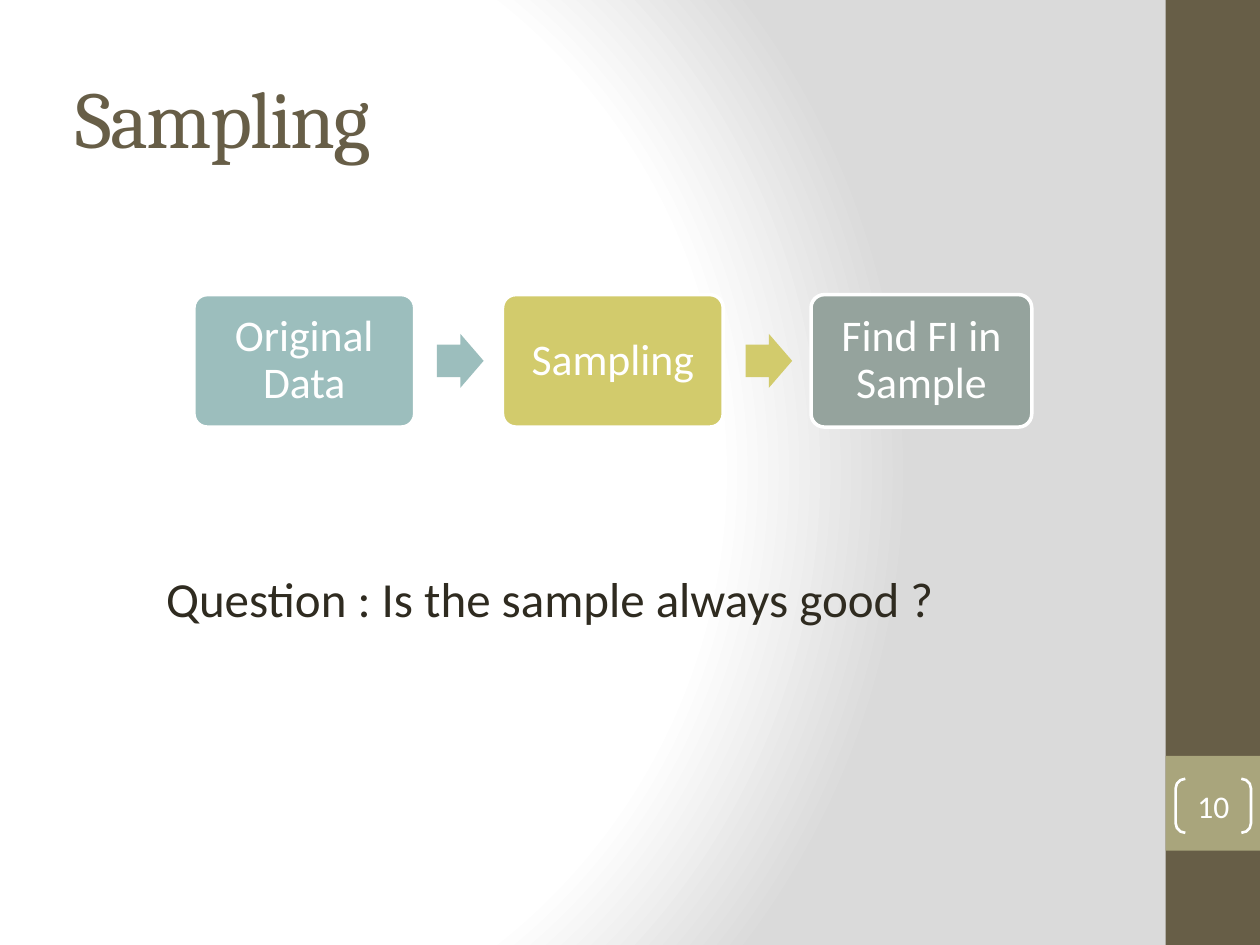
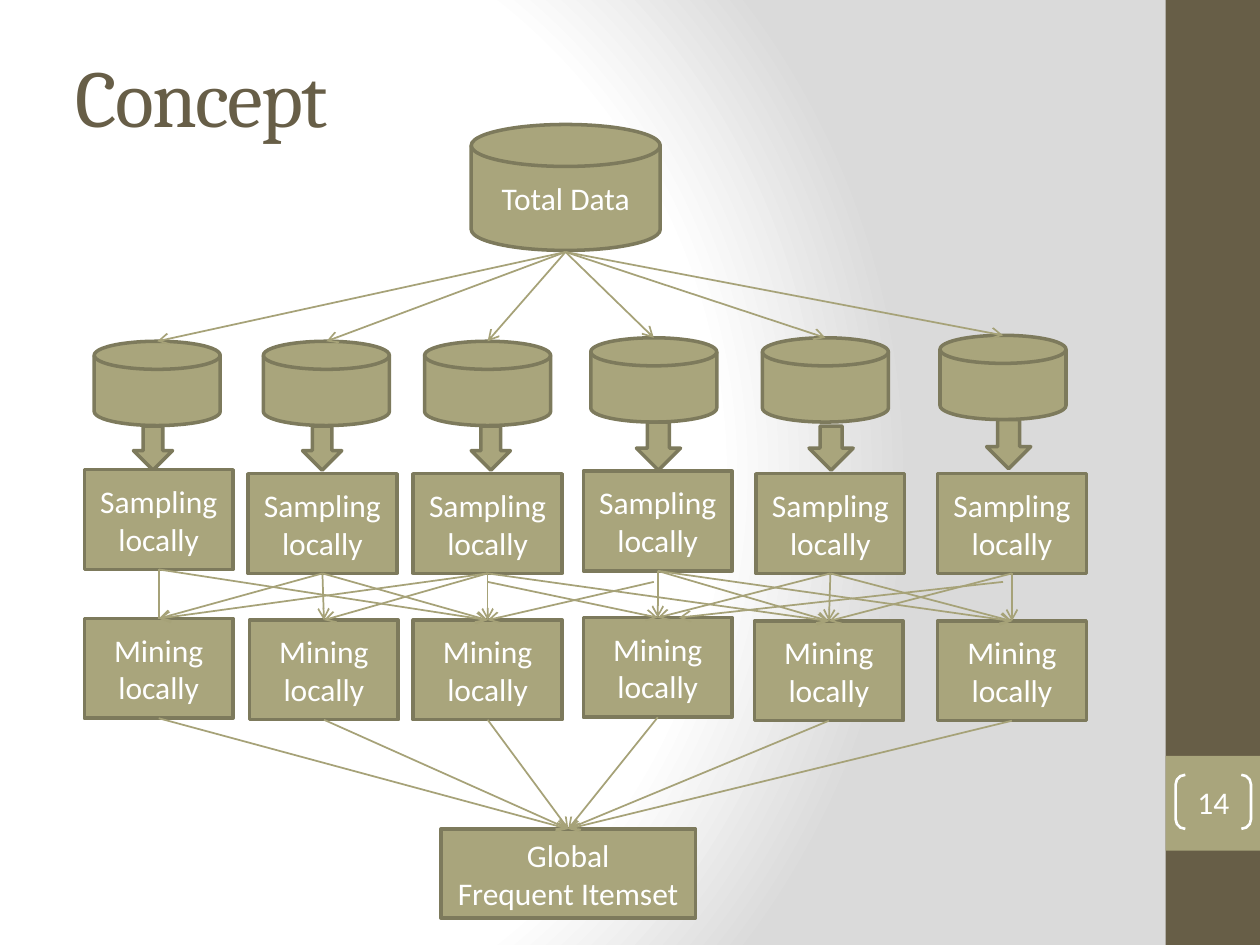
from pptx import Presentation
from pptx.dml.color import RGBColor
from pptx.enum.shapes import MSO_CONNECTOR, MSO_SHAPE
from pptx.enum.text import MSO_ANCHOR, MSO_AUTO_SIZE, PP_ALIGN
from pptx.oxml import parse_xml
from pptx.oxml.ns import nsdecls, qn
from pptx.util import Cm, Pt

RECT = MSO_SHAPE.RECTANGLE
ROUNDED = MSO_SHAPE.ROUNDED_RECTANGLE
DISK = MSO_SHAPE.FLOWCHART_MAGNETIC_DISK
RIGHT_ARROW = MSO_SHAPE.RIGHT_ARROW
DOWN_ARROW = MSO_SHAPE.DOWN_ARROW
BRACKETS = MSO_SHAPE.DOUBLE_BRACKET
STRAIGHT = MSO_CONNECTOR.STRAIGHT
MIDDLE = MSO_ANCHOR.MIDDLE
CENTER = PP_ALIGN.CENTER
LEFT = PP_ALIGN.LEFT
NO_FIT = MSO_AUTO_SIZE.NONE
FIT_SHAPE = MSO_AUTO_SIZE.SHAPE_TO_FIT_TEXT
TOP, BOTTOM = 0, 2

WHITE = RGBColor(0xFF, 0xFF, 0xFF)
BROWN = RGBColor(0x67, 0x5E, 0x47)
INK = RGBColor(0x2F, 0x2B, 0x20)
OLIVE = RGBColor(0xA9, 0xA5, 0x7C)
OLIVE_DARK = RGBColor(0x7D, 0x7A, 0x5C)
OLIVE_LINE = RGBColor(0xA6, 0xA2, 0x78)
TEAL = RGBColor(0x9C, 0xBE, 0xBD)
LIME = RGBColor(0xD2, 0xCB, 0x6C)
SAGE = RGBColor(0x95, 0xA3, 0x9D)

BACKGROUND = f"""<a:gradFill {nsdecls("a")} rotWithShape="1"><a:gsLst>
<a:gs pos="0"><a:srgbClr val="FFFFFF"/></a:gs>
<a:gs pos="75000"><a:srgbClr val="FFFFFF"/></a:gs>
<a:gs pos="100000"><a:srgbClr val="DADADA"/></a:gs></a:gsLst>
<a:path path="circle"><a:fillToRect l="20000" t="50000" r="100000" b="50000"/></a:path>
</a:gradFill>"""


class Deck:
    heading_font = "Cambria"
    body_font = "Calibri"

    def __init__(self):
        self.prs = Presentation()
        self.prs.slide_width, self.prs.slide_height = Cm(25.4), Cm(19.05)
        master = self.prs.slide_master
        master.background.fill.background()
        bg = master.element.find(".//" + qn("p:bgPr"))
        bg.replace(bg[0], parse_xml(BACKGROUND))
        self.s = None

    def slide(self, title, number, title_top, number_top):
        self.s = self.prs.slides.add_slide(self.prs.slide_layouts[5])
        self.shape(RECT, 23.5, 0, 1.9, 19.05, BROWN)
        self.shape(RECT, 23.5, 15.24, 1.9, 1.91, OLIVE)
        sp = self.s.shapes.title
        sp.left, sp.top, sp.width, sp.height = Cm(1.27), Cm(title_top), Cm(21.16), Cm(3.18)
        tf = sp.text_frame
        tf.auto_size, tf.vertical_anchor = NO_FIT, MIDDLE
        self.add_lines(tf, [title], 46, BROWN, LEFT, self.heading_font)
        tf.paragraphs[0].runs[0].font._element.set("spc", "-100")
        sp = self.shape(BRACKETS, 23.7, number_top, 1.52, 1.09, None, WHITE, 1.5, [0.179])
        self.label(sp, [number], inset=0)

    def add_lines(self, tf, lines, size, color, align=CENTER, font=body_font, spacing=None):
        for i, line in enumerate(lines):
            p = tf.add_paragraph() if i else tf.paragraphs[0]
            p.alignment, p.line_spacing = align, spacing
            r = p.add_run()
            r.text = line
            r.font.name, r.font.size = font, Pt(size)
            r.font.color.rgb = color

    def shape(self, kind, x, y, w, h, fill, line=None, weight=2, adjust=()):
        sp = self.s.shapes.add_shape(kind, Cm(x), Cm(y), Cm(w), Cm(h))
        sp.shadow.inherit = False
        for i, value in enumerate(adjust):
            sp.adjustments[i] = value
        if fill is None:
            sp.fill.background()
        else:
            sp.fill.solid()
            sp.fill.fore_color.rgb = fill
        if line is None:
            sp.line.fill.background()
        else:
            sp.line.color.rgb, sp.line.width = line, Pt(weight)
        return sp

    def olive(self, kind, x, y, w, h, lines=()):
        sp = self.shape(kind, x, y, w, h, OLIVE, OLIVE_DARK)
        if lines:
            self.label(sp, lines)
        return sp

    def label(self, sp, lines, size=18, inset=None, spacing=None):
        tf = sp.text_frame
        tf.word_wrap, tf.vertical_anchor = True, MIDDLE
        if inset is not None:
            tf.margin_left = tf.margin_right = tf.margin_top = tf.margin_bottom = Cm(inset)
        self.add_lines(tf, lines, size, WHITE, spacing=spacing)

    def text(self, x, y, w, h, line, size):
        tf = self.s.shapes.add_textbox(Cm(x), Cm(y), Cm(w), Cm(h)).text_frame
        tf.word_wrap, tf.auto_size = False, FIT_SHAPE
        self.add_lines(tf, [line], size, INK, LEFT)

    def link(self, start, end, arrow=True):
        points = [Cm(v) for at in (start, end) for v in (at if isinstance(at, tuple) else (0, 0))]
        c = self.s.shapes.add_connector(STRAIGHT, *points)
        if not isinstance(start, tuple):
            c.begin_connect(start, BOTTOM)
        if not isinstance(end, tuple):
            c.end_connect(end, TOP)
        c.line.color.rgb, c.line.width = OLIVE_LINE, Pt(1)
        if arrow:
            ln = c.line._get_or_add_ln()
            ln.append(parse_xml(f'<a:tailEnd {nsdecls("a")} type="arrow"/>'))
        c._element.spPr.append(parse_xml(f'<a:effectLst {nsdecls("a")}/>'))


def sampling_slide(deck):
    deck.slide("Sampling", "10", 0.76, 15.7)
    steps = [("Original Data", TEAL), ("Sampling", LIME), ("Find FI in Sample", SAGE)]
    for i, (step, color) in enumerate(steps):
        x = 3.91 + 6.22 * i
        sp = deck.shape(ROUNDED, x, 5.94, 4.45, 2.67, color, WHITE, adjust=[0.1])
        deck.label(sp, [step], 25, 0.25, 0.9)
        if i < len(steps) - 1:
            deck.shape(RIGHT_ARROW, x + 4.9, 6.73, 0.94, 1.09, color, adjust=[0.6, 0.5])
    deck.text(3.1, 11.33, 16.15, 1.45, "Question : Is the sample always good ?", 28)


def concept_slide(deck):
    deck.slide("Concept", "14", 0.33, 15.62)
    deck.olive(DISK, 9.5, 2.51, 3.81, 2.54, ["Total Data"])
    disks = [(1.9, 6.88), (5.31, 6.88), (8.56, 6.88), (11.91, 6.81), (15.37, 6.81), (18.95, 6.76)]
    for x, y in disks:
        deck.olive(DISK, x, y, 2.54, 1.7)
        deck.link((11.4, 5.08), (x + 1.27, y))

    arrows = [(2.69, 8.59, 0.79, 0.89), (6.1, 8.59, 0.79, 0.89), (9.5, 8.59, 0.79, 0.89),
              (12.83, 8.51, 0.89, 0.97), (16.31, 8.59, 0.89, 0.89), (19.89, 8.46, 0.89, 0.99)]
    for box in arrows:
        deck.olive(DOWN_ARROW, *box)

    sample_spots = [(1.7, 9.47), (5, 9.55), (8.33, 9.55), (11.76, 9.5), (15.24, 9.55), (18.9, 9.55)]
    mining_spots = [(1.7, 12.47), (5.03, 12.5), (8.33, 12.5),
                    (11.76, 12.45), (15.21, 12.52), (18.9, 12.52)]
    samples = [deck.olive(RECT, x, y, 3, 2.01, ["Sampling locally"]) for x, y in sample_spots]
    miners = [deck.olive(RECT, x, y, 3, 2.01, ["Mining", "locally"]) for x, y in mining_spots]
    result = deck.olive(RECT, 8.89, 16.71, 5.13, 1.8, ["Global", "Frequent Itemset"])
    for miner in miners:
        deck.link(miner, result)

    targets = [(0, 2), (0, 1, 2), (0, 1, 2, 4), (3, 4, 5), (3, 4, 5), (4, 5)]
    for i, (sample, ends) in enumerate(zip(samples, targets)):
        for j in ends:
            deck.link(sample, miners[j], arrow=(i, j) != (0, 0))
    deck.link((9.83, 11.73), miners[3])
    deck.link((13.18, 11.73), miners[2])
    deck.link((20.22, 11.73), (13.69, 12.45))


def main():
    deck = Deck()
    sampling_slide(deck)
    concept_slide(deck)
    deck.prs.save("out.pptx")


if __name__ == "__main__":
    main()
